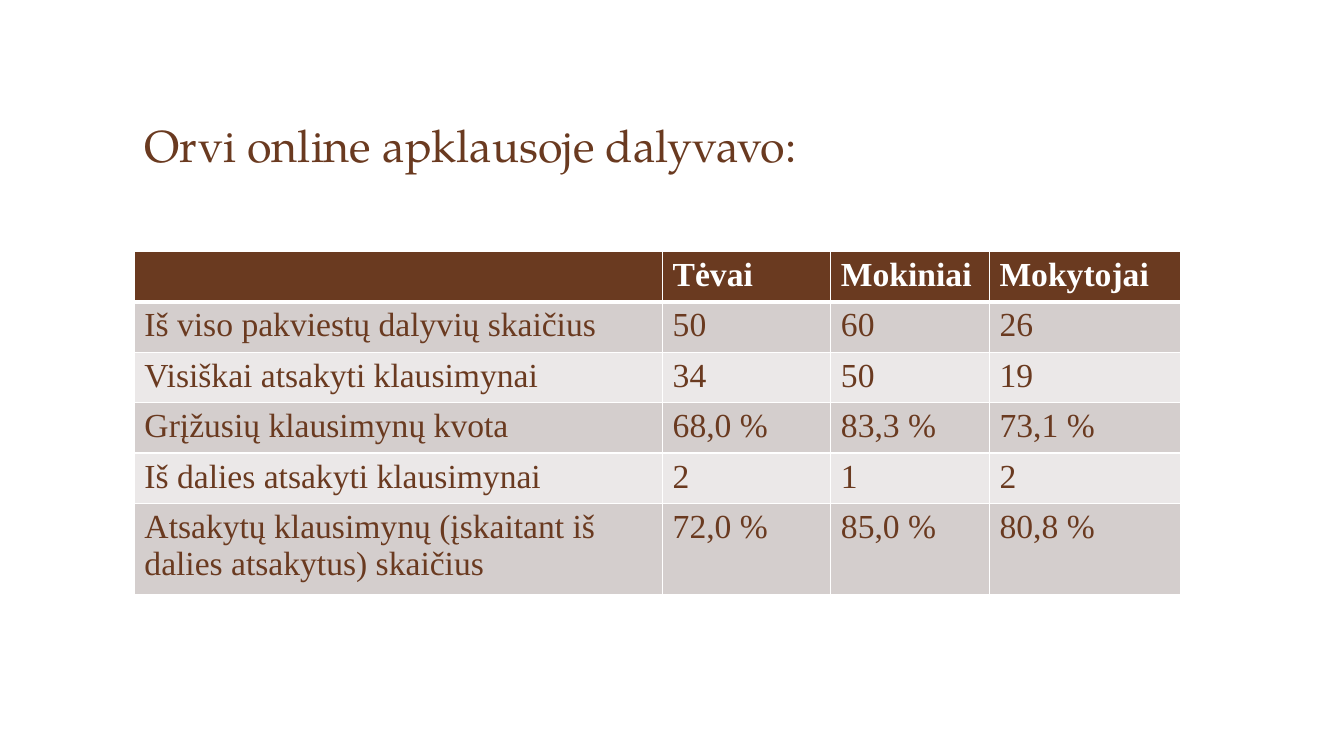
import pptx
import pptx.dml.color
import pptx.enum.text
import pptx.oxml
import pptx.oxml.ns
import pptx.util

COLORS = {"brown": "6A3A20", "white": "FFFFFF", "dark band": "D4CECD", "light band": "EBE8E8"}
COLUMN_WIDTHS = [377.3, 120.2, 113.3, 136.4]
ROW_HEIGHTS = [33.8] * 5 + [60]
ROWS = [
    ["", "Tėvai", "Mokiniai", "Mokytojai"],
    ["Iš viso pakviestų dalyvių skaičius", "50", "60", "26"],
    ["Visiškai atsakyti klausimynai", "34", "50", "19"],
    ["Grįžusių klausimynų kvota", "68,0 %", "83,3 %", "73,1 %"],
    ["Iš dalies atsakyti klausimynai", "2", "1", "2"],
    ["Atsakytų klausimynų (įskaitant iš dalies atsakytus) skaičius", "72,0 %", "85,0 %", "80,8 %"],
]


class SurveySlide:
    """Holds the style and the current slide, and adds its elements."""

    title_font = "TeX Gyre Pagella"
    table_font = "Times New Roman"

    def __init__(self, page):
        self.page = page

    def color(self, name):
        return pptx.dml.color.RGBColor.from_string(COLORS[name])

    def set_text(self, frame, text, font, size, color, bold=False):
        paragraph = frame.paragraphs[0]
        paragraph.text = text
        paragraph.font.name = font
        paragraph.font.size = pptx.util.Pt(size)
        paragraph.font.bold = bold
        paragraph.font.color.rgb = self.color(color)

    def title(self, text, *bounds):
        box = self.page.shapes.add_textbox(*map(pptx.util.Pt, bounds))
        frame = box.text_frame
        frame.word_wrap = True
        frame.vertical_anchor = pptx.enum.text.MSO_ANCHOR.BOTTOM
        self.set_text(frame, text, self.title_font, 32, "brown")

    def borders(self, cell, widths):
        properties = cell._tc.get_or_add_tcPr()
        for position, (side, width) in enumerate(widths.items()):
            line = pptx.oxml.parse_xml(
                f'<a:{side} {pptx.oxml.ns.nsdecls("a")} w="{pptx.util.Pt(width)}"><a:solidFill>'
                f'<a:srgbClr val="{COLORS["white"]}"/></a:solidFill></a:{side}>'
            )
            properties.insert(position, line)

    def table(self, rows, left, top, widths, heights):
        bounds = map(pptx.util.Pt, (left, top, sum(widths), sum(heights)))
        table = self.page.shapes.add_table(len(rows), len(widths), *bounds).table
        for column, width in zip(table.columns, widths):
            column.width = pptx.util.Pt(width)
        for index, (row, height, texts) in enumerate(zip(table.rows, heights, rows)):
            row.height = pptx.util.Pt(height)
            header = index == 0
            band = "brown" if header else "dark band" if index % 2 else "light band"
            edges = {"lnL": 1, "lnR": 1, "lnT": 3 if index == 1 else 1, "lnB": 3 if header else 1}
            for cell, text in zip(row.cells, texts):
                cell.fill.solid()
                cell.fill.fore_color.rgb = self.color(band)
                self.borders(cell, edges)
                ink = "white" if header else "brown"
                self.set_text(cell.text_frame, text, self.table_font, 24, ink, header)


def main():
    deck = pptx.Presentation()
    deck.slide_width = pptx.util.Pt(960)
    deck.slide_height = pptx.util.Pt(540)
    slide = SurveySlide(deck.slides.add_slide(deck.slide_layouts[6]))
    slide.title("Orvi online apklausoje dalyvavo:", 96, 34, 767.5, 92)
    slide.table(ROWS, 96, 179.5, COLUMN_WIDTHS, ROW_HEIGHTS)
    deck.save("out.pptx")


if __name__ == "__main__":
    main()
